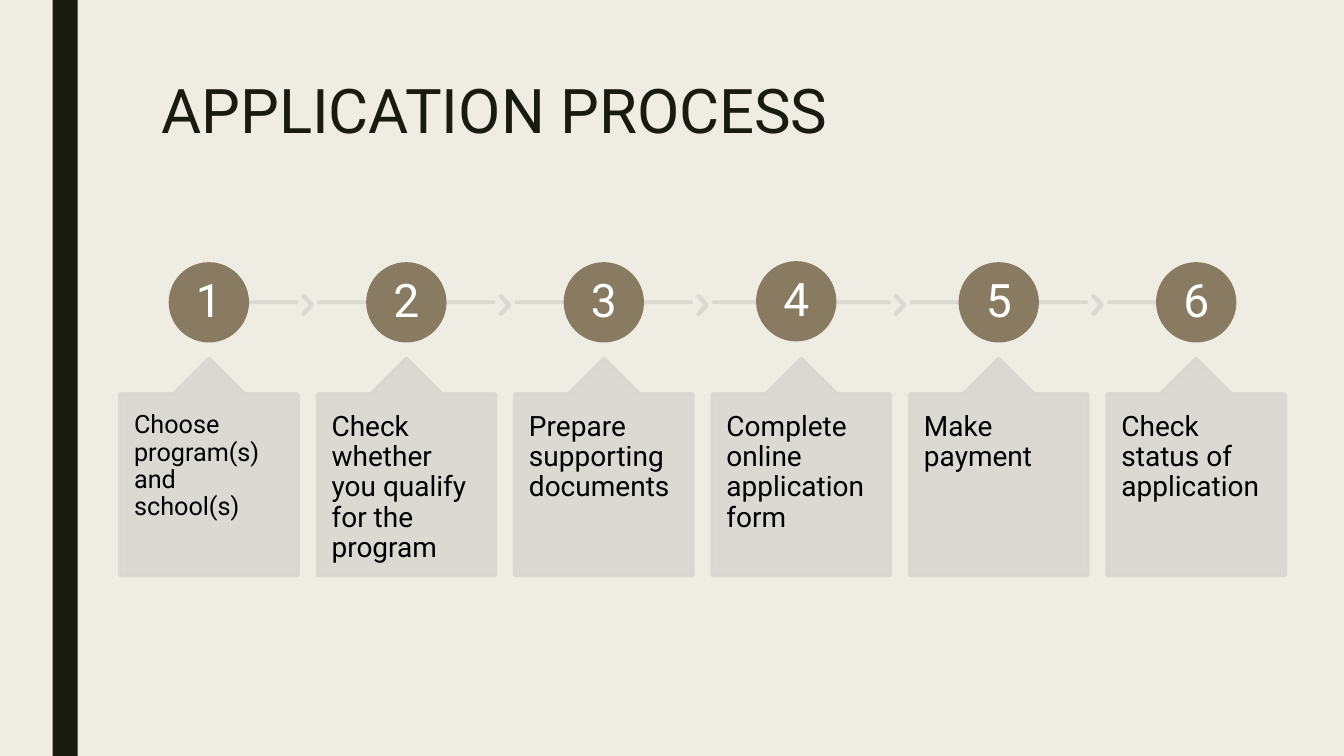
from dataclasses import dataclass
from math import sqrt

from lxml.etree import SubElement
from pptx import Presentation
from pptx.dml.color import RGBColor
from pptx.enum.shapes import MSO_CONNECTOR, MSO_SHAPE
from pptx.enum.text import MSO_ANCHOR, PP_ALIGN
from pptx.oxml.ns import qn
from pptx.util import Emu, Inches, Pt

CELL = 76200
COLUMNS, ROWS = 160, 90


@dataclass(frozen=True)
class Theme:
    """Colours, font and type sizes of the deck."""
    background: str = "EFEDE3"
    dark: str = "191B0E"
    accent: str = "897B61"
    card: str = "DAD7D2"
    white: str = "FFFFFF"
    black: str = "000000"
    font: str = "Roboto"
    title_size: float = 44
    number_size: float = 33
    body_size: float = 20
    small_size: float = 18
    line_width: float = 2.75
    card_alpha: int = 90


@dataclass(frozen=True)
class Box:
    """A rectangle measured in grid columns and rows."""
    left: float
    top: float
    width: float
    height: float

    def emu(self):
        """Return the four sides in slide units."""
        return [Emu(round(side * CELL))
                for side in (self.left, self.top, self.width, self.height)]


@dataclass(frozen=True)
class Step:
    """One step of the process, with a shift for its circle."""
    text: str
    size: float
    shift: tuple = (0, 0)


THEME = Theme()
BAR = Box(6.25, 0, 3, ROWS)
TITLE = Box(18, 9, 126, 19.44)
PROCESS = Box(14.28, 31.44, 138.72, 37.08)
CARD_GAP = 0.11
STEPS = [
    Step("Choose program(s) and school(s)", THEME.small_size),
    Step("Check whether you qualify for the program", THEME.body_size),
    Step("Prepare supporting documents", THEME.body_size),
    Step("Complete online application form", THEME.body_size, (-0.6, -0.12)),
    Step("Make payment", THEME.body_size),
    Step("Check status of application", THEME.body_size),
]


def paint(fill, color, alpha=100):
    """Give a fill a solid colour and an opacity in percent."""
    fill.solid()
    fill.fore_color.rgb = RGBColor.from_string(color)
    if alpha < 100:
        for tone in fill._xPr.iter(qn("a:srgbClr")):
            SubElement(tone, qn("a:alpha"), val=str(alpha * 1000))


def add_figure(page, kind, box, color, alpha=100, adjustments=()):
    """Add a preset shape whose outline matches its fill."""
    shape = page.shapes.add_shape(kind, *box.emu())
    shape.shadow.inherit = False
    for index, value in enumerate(adjustments):
        shape.adjustments[index] = value
    shape.line.width = Pt(THEME.line_width)
    paint(shape.line.fill, color, alpha)
    paint(shape.fill, color, alpha)
    return shape


def set_text(frame, text, size, color, spacing=0.9):
    """Write one paragraph and format it."""
    frame.word_wrap = True
    frame.text = text
    para = frame.paragraphs[0]
    para.line_spacing = spacing
    span = para.runs[0]
    span.font.name = THEME.font
    span.font.size = Pt(size)
    span.font.color.rgb = RGBColor.from_string(color)
    return para


def add_label(page, box, text, size, color, insets):
    """Add a text box with the given side and end insets in inches."""
    frame = page.shapes.add_textbox(*box.emu()).text_frame
    frame.margin_left = frame.margin_right = Inches(insets[0])
    frame.margin_top = frame.margin_bottom = Inches(insets[1])
    set_text(frame, text, size, color)
    return frame


def add_track(page, box, start, end):
    """Draw the horizontal line behind a circle."""
    left, top, width, _ = Box(start, box.top + 0.215 * box.width,
                              end - start, 0).emu()
    track = page.shapes.add_connector(
        MSO_CONNECTOR.STRAIGHT, left, top, left + width, top)
    track.line.width = Pt(THEME.line_width)
    paint(track.line.fill, THEME.card, THEME.card_alpha)
    SubElement(track._element.spPr, qn("a:effectLst"))


def add_circle(page, box, number, shift):
    """Draw the numbered circle centred at the top of a step."""
    size = 0.43 * box.width
    left = box.left + (box.width - size) / 2 + shift[0]
    top = box.top + shift[1]
    add_figure(page, MSO_SHAPE.OVAL, Box(left, top, size, size), THEME.accent)
    inset = size * (1 - sqrt(0.5)) / 2
    inner = size - 2 * inset
    frame = add_label(page, Box(left + inset, top + inset, inner, inner),
                      str(number), THEME.number_size, THEME.white, (0.03, 0.03))
    frame.vertical_anchor = MSO_ANCHOR.MIDDLE
    frame.paragraphs[0].alignment = PP_ALIGN.CENTER


def add_card(page, box, step):
    """Draw the callout at the foot of a step with its text."""
    height = 1.22 * box.width
    head = 0.2 * box.width
    top = box.top + box.height - height
    add_figure(page, MSO_SHAPE.UP_ARROW_CALLOUT,
               Box(box.left, top, box.width, height),
               THEME.card, THEME.card_alpha, (0.5, 0.2, 0.2, 1))
    add_label(page, Box(box.left, top + head, box.width, height - head),
              step.text, step.size, THEME.black, (0.14, 0.18))


def add_step(page, box, number, step):
    """Place the track, chevron, circle and card of one step."""
    middle, right = box.left + box.width / 2, box.left + box.width
    first, last = number == 1, number == len(STEPS)
    add_track(page, box, middle if first else box.left,
              middle if last else right)
    if not last:
        chevron = Box(right + 0.03 * box.width, box.top + 0.18 * box.width,
                      0.05 * box.width, 0.1 * box.width)
        add_figure(page, MSO_SHAPE.CHEVRON, chevron,
                   THEME.card, THEME.card_alpha, (0.9,))
    add_circle(page, box, number, step.shift)
    add_card(page, box, step)


def add_process(page, box):
    """Spread the steps evenly across a box."""
    count = len(STEPS)
    width = box.width / (count + (count - 1) * CARD_GAP)
    pitch = width * (1 + CARD_GAP)
    for index, step in enumerate(STEPS):
        place = Box(box.left + index * pitch, box.top, width, box.height)
        add_step(page, place, index + 1, step)


def add_title(page, box, text):
    """Move and format the title placeholder."""
    title = page.shapes.title
    title.left, title.top, title.width, title.height = box.emu()
    frame = title.text_frame
    para = set_text(frame, text, THEME.title_size, THEME.dark, 0.89)
    para.alignment = PP_ALIGN.LEFT
    frame.vertical_anchor = MSO_ANCHOR.TOP


def add_bar(page, box):
    """Draw the dark band at the left of the page."""
    bar = add_figure(page, MSO_SHAPE.RECTANGLE, box, THEME.dark)
    bar.line.fill.background()


def main():
    """Build and save the deck."""
    deck = Presentation()
    deck.slide_width, deck.slide_height = COLUMNS * CELL, ROWS * CELL
    page = deck.slides.add_slide(deck.slide_layouts[5])
    paint(page.background.fill, THEME.background)
    add_bar(page, BAR)
    add_title(page, TITLE, "APPLICATION PROCESS")
    add_process(page, PROCESS)
    deck.save("out.pptx")


if __name__ == "__main__":
    main()
